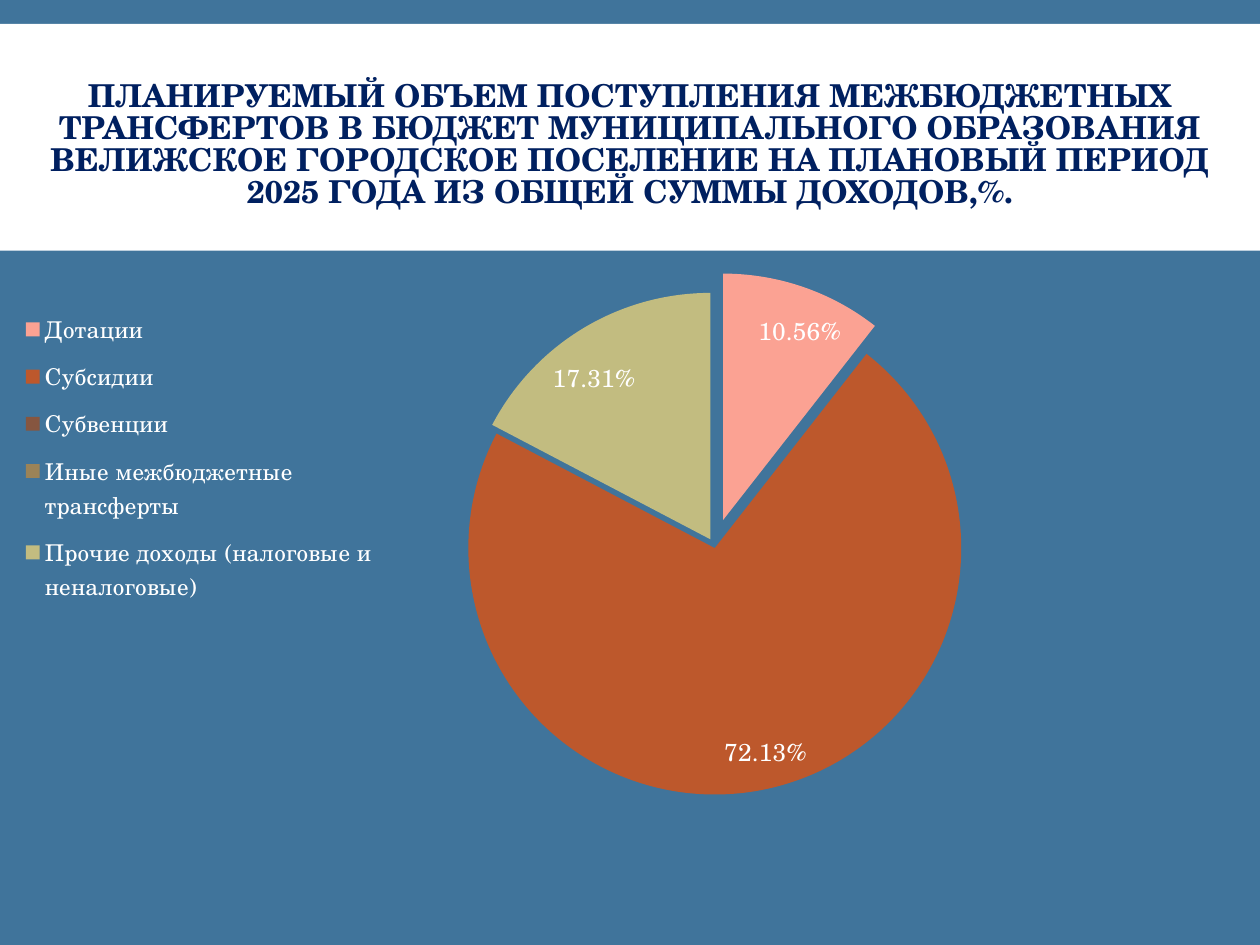
from typing import NamedTuple

from lxml.etree import SubElement
from pptx import Presentation
from pptx.chart.data import CategoryChartData
from pptx.dml.color import RGBColor
from pptx.enum.chart import XL_CHART_TYPE as Kind, XL_LEGEND_POSITION as Side
from pptx.enum.shapes import MSO_SHAPE as Shape
from pptx.enum.text import MSO_ANCHOR as Anchor, PP_ALIGN as Align
from pptx.oxml.ns import qn
from pptx.util import Inches, Pt

FONT = "TeX Gyre Schola"
WHITE, NAVY, BLUE = "FFFFFF", "002060", "40749B"
PERCENT = "0.00%"
TITLE = (
    "ПЛАНИРУЕМЫЙ ОБЪЕМ ПОСТУПЛЕНИЯ МЕЖБЮДЖЕТНЫХ ТРАНСФЕРТОВ "
    "В БЮДЖЕТ МУНИЦИПАЛЬНОГО ОБРАЗОВАНИЯ ВЕЛИЖСКОЕ ГОРОДСКОЕ ПОСЕЛЕНИЕ "
    "НА ПЛАНОВЫЙ ПЕРИОД 2025 ГОДА ИЗ ОБЩЕЙ СУММЫ ДОХОДОВ,%."
)


class Box(NamedTuple):
    x: float
    y: float
    w: float
    h: float


class Slice(NamedTuple):
    name: str
    share: float
    color: str
    burst: int = 0  # distance from the centre, percent of the radius


# Inches on the slide
BAND = Box(0, 0.19, 10, 1.8)
HEAD = Box(0, 0.58, 10, 1.16)
CHART = Box(0, 2, 9.86, 5.36)
# Fractions of the chart
LEGEND = Box(0, 0.07, 0.32, 0.47)
PIE = Box(0.37, 0.07, 0.41, 0.73)

SLICES = [
    Slice("Дотации", 0.1056, "FBA293", 11),
    Slice("Субсидии", 0.7213, "BD582C", 1),
    Slice("Субвенции", 0, "865640"),
    Slice("Иные межбюджетные трансферты", 0, "9B8357"),
    Slice("Прочие доходы (налоговые и неналоговые)", 0.1731, "C2BC80", 3),
]


def rgb(color: str) -> RGBColor:
    return RGBColor.from_string(color)


def paint(fill, color: str) -> None:
    fill.solid()
    fill.fore_color.rgb = rgb(color)


def style(font, size: float, color: str, name: str = FONT) -> None:
    font.name, font.size = name, Pt(size)
    font.color.rgb = rgb(color)


def add_node(parent, tag: str, val: object = None):
    """Append a chart element, with a val attribute if one is given."""
    node = SubElement(parent, qn(f"c:{tag}"))
    if val is not None:
        node.set("val", str(val))
    return node


def place(part, index: int, box: Box, inner: bool = False) -> None:
    """Fix a chart part by a manual layout, as its child number index."""
    for old in part.findall(qn("c:layout")):
        part.remove(old)
    layout = add_node(part, "layout")
    part.insert(index, layout)
    manual = add_node(layout, "manualLayout")
    if inner:
        add_node(manual, "layoutTarget", "inner")
    for axis in "xy":
        add_node(manual, f"{axis}Mode", "edge")
    for side, length in box._asdict().items():
        add_node(manual, side, length)


def add_band(slide) -> None:
    band = slide.shapes.add_shape(Shape.RECTANGLE, *map(Inches, BAND))
    band.shadow.inherit = False
    paint(band.fill, WHITE)
    band.line.fill.background()
    # Behind the title: the first two children are group properties
    slide.shapes._spTree.insert(2, band._element)


def set_title(slide) -> None:
    title = slide.shapes.title
    title.left, title.top, title.width, title.height = map(Inches, HEAD)
    frame = title.text_frame
    frame.word_wrap = True
    frame.vertical_anchor = Anchor.MIDDLE
    para = frame.paragraphs[0]
    para.alignment, para.line_spacing = Align.CENTER, 0.85
    run = para.add_run()
    run.text = TITLE
    run.font.bold = True
    style(run.font, 18, NAVY)


def add_chart(slide):
    data = CategoryChartData(number_format=PERCENT)
    data.categories = [part.name for part in SLICES]
    data.add_series("Series 1", [part.share for part in SLICES])
    frame = slide.shapes.add_chart(Kind.PIE, *map(Inches, CHART), data)
    chart = frame.chart
    chart.has_title = False
    style(chart.font, 10, WHITE, "Calibri")
    chart.plots[0].vary_by_categories = True
    place(chart._chartSpace.chart.plotArea, 0, PIE, inner=True)
    return chart


def set_legend(chart) -> None:
    chart.has_legend = True
    legend = chart.legend
    legend.position, legend.include_in_layout = Side.BOTTOM, False
    style(legend.font, 13.2, WHITE)
    place(legend._element, 1, LEGEND)


def set_slices(series) -> None:
    for i, part in enumerate(SLICES):
        look = series.points[i].format
        paint(look.fill, part.color)
        look.line.fill.background()
    for dot, part in zip(series._element.findall(qn("c:dPt")), SLICES):
        if part.burst:
            burst = add_node(dot, "explosion", part.burst)
            dot.find(qn("c:spPr")).addprevious(burst)


def set_labels(series) -> None:
    """Show each share, except on the empty slices."""
    labels = series.data_labels
    labels.show_value = True
    labels.number_format, labels.number_format_is_linked = PERCENT, False
    style(labels.font, 14, WHITE)
    empty = [i for i, part in enumerate(SLICES) if not part.share]
    for spot, i in enumerate(empty):
        label = add_node(labels._element, "dLbl")
        add_node(label, "idx", i)
        add_node(label, "delete", 1)
        labels._element.insert(spot, label)


def main() -> None:
    deck = Presentation()
    deck.slide_width, deck.slide_height = Inches(10), Inches(7.5)
    slide = deck.slides.add_slide(deck.slide_layouts[5])
    paint(slide.background.fill, BLUE)
    add_band(slide)
    set_title(slide)
    chart = add_chart(slide)
    set_legend(chart)
    series = chart.plots[0].series[0]
    set_slices(series)
    set_labels(series)
    deck.save("out.pptx")


if __name__ == "__main__":
    main()
